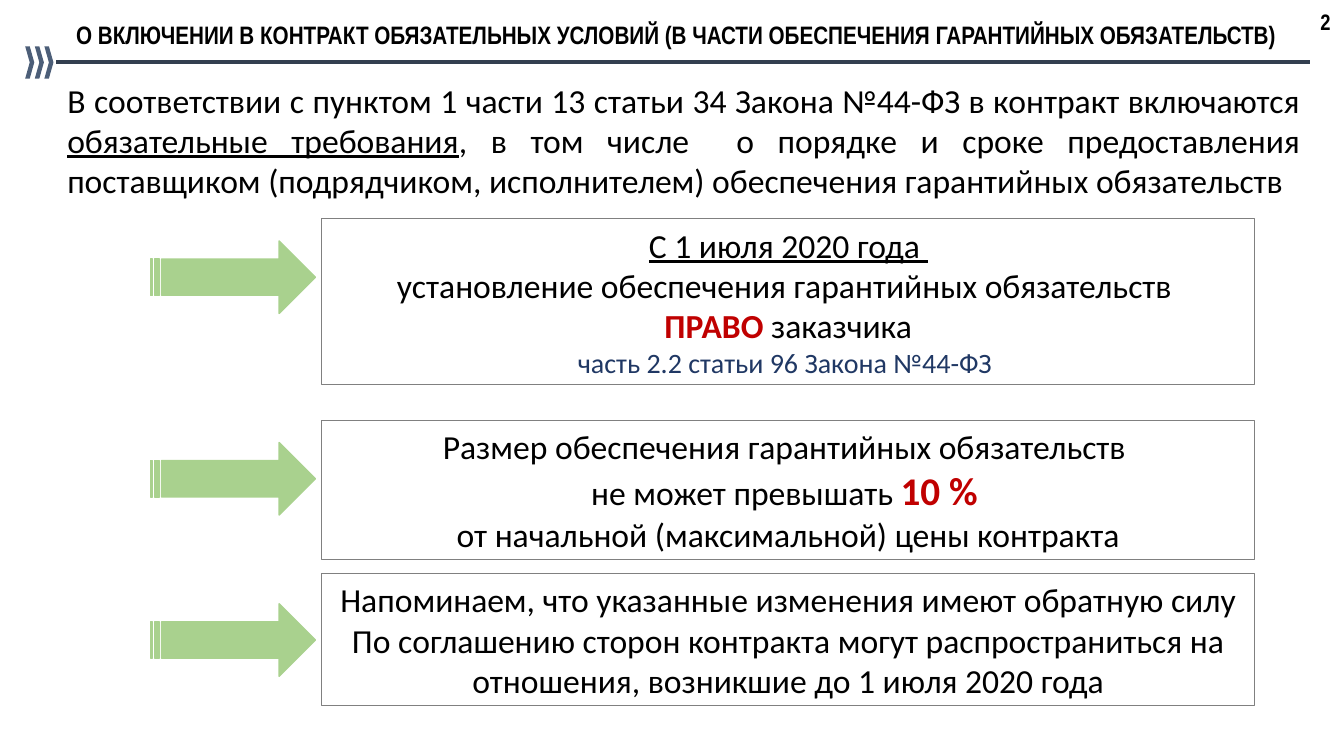
import pptx
import pptx.dml.color
import pptx.enum.shapes
import pptx.enum.text
import pptx.oxml.ns
import pptx.util
from lxml import etree

Pt = pptx.util.Pt
Shape = pptx.enum.shapes.MSO_SHAPE
Align = pptx.enum.text.PP_ALIGN
Anchor = pptx.enum.text.MSO_ANCHOR

# Content: a paragraph is a list of (text, style) runs
TITLE = [[("О ВКЛЮЧЕНИИ В КОНТРАКТ ОБЯЗАТЕЛЬНЫХ УСЛОВИЙ "
           "(В ЧАСТИ ОБЕСПЕЧЕНИЯ ГАРАНТИЙНЫХ ОБЯЗАТЕЛЬСТВ)", "title")]]
PAGE_NUMBER = [[("2", "page")]]
INTRO = [[
    ("В соответствии с пунктом 1 части 13 статьи 34 Закона №44-ФЗ в контракт включаются ", "body"),
    ("обязательные требования", "underlined"),
    (", в том числе  о порядке и сроке предоставления поставщиком "
     "(подрядчиком, исполнителем) обеспечения гарантийных обязательств", "body"),
]]
# Each card: top, height, arrow offset from card top, paragraphs
CARDS = [
    (156.2, 118.8, 15.9, [
        [("С 1 июля 2020 года ", "underlined")],
        [("установление обеспечения гарантийных обязательств ", "body")],
        [("ПРАВО", "accent"), (" заказчика", "body")],
        [("часть 2.2 статьи 96 Закона №44-ФЗ ", "reference")],
    ]),
    (300.2, 99.4, 15.9, [
        [("Размер обеспечения гарантийных обязательств ", "body")],
        [("не может превышать ", "body"), ("10 %", "figure"), (" ", "body")],
        [("от начальной (максимальной) цены контракта", "body")],
    ]),
    (409.7, 94.3, 21.6, [
        [("Напоминаем, что указанные изменения имеют обратную силу", "body")],
        [("По соглашению сторон контракта могут распространиться на "
          "отношения, возникшие до 1 июля 2020 года", "body")],
    ]),
]

# Theme: styles are font, size, colour, bold, underline
THEME = {
    "rule": "333F50", "chevron": "4C5E78", "border": "808080", "arrow": "A9D18E",
    "styles": {
        "title": ("Arial Narrow", 18, "000000", True, False),
        "page": ("Arial Narrow", 16, "000000", True, False),
        "body": ("Calibri", 24, "000000", False, False),
        "underlined": ("Calibri", 24, "000000", False, True),
        "accent": ("Calibri", 24, "C00000", True, False),
        "figure": ("Calibri", 28, "C00000", True, False),
        "reference": ("Calibri", 20, "203864", False, False),
    },
}

# Layout in points
CARD_LEFT, CARD_WIDTH = 229.7, 666.7
ARROW_LEFT, ARROW_WIDTH, ARROW_HEIGHT = 107.3, 118, 51.8
CHEVRON_LEFT, CHEVRON_STEP, CHEVRON_COUNT = 18, 6.85, 3


def color(name):
    return pptx.dml.color.RGBColor.from_string(THEME.get(name, name))


def set_font(font, style):
    font.name, size, ink, font.bold, font.underline = THEME["styles"][style]
    font.size = Pt(size)
    font.color.rgb = color(ink)


def write(shape, paragraphs, alignment):
    frame = shape.text_frame
    frame.word_wrap = True
    for index, runs in enumerate(paragraphs):
        paragraph = frame.add_paragraph() if index else frame.paragraphs[0]
        paragraph.alignment = alignment
        same_style = len({style for _, style in runs}) == 1
        if same_style:
            set_font(paragraph.font, runs[0][1])
        for text, style in runs:
            run = paragraph.add_run()
            run.text = text
            if not same_style:
                set_font(run.font, style)


def add_text(slide, box, paragraphs, alignment):
    write(slide.shapes.add_textbox(*map(Pt, box)), paragraphs, alignment)


def add_shape(slide, kind, box, fill=None, line=None, line_width=1):
    shape = slide.shapes.add_shape(kind, *map(Pt, box))
    shape.shadow.inherit = False
    if fill:
        shape.fill.solid()
        shape.fill.fore_color.rgb = color(fill)
    else:
        shape.fill.background()
    if line:
        shape.line.color.rgb = color(line)
        shape.line.width = Pt(line_width)
    else:
        shape.line.fill.background()
    return shape


def add_header(slide):
    add_text(slide, (32.4, 10.1, 901.4, 28.8), TITLE, Align.CENTER)
    add_text(slide, (936, 2, 21.6, 26.6), PAGE_NUMBER, Align.LEFT)
    rule = slide.shapes.add_connector(
        pptx.enum.shapes.MSO_CONNECTOR.STRAIGHT, Pt(40.3), Pt(44.6), Pt(936), Pt(44.6))
    rule.line.color.rgb = color("rule")
    rule.line.width = Pt(2.75)
    etree.SubElement(rule.element.spPr, pptx.oxml.ns.qn("a:effectLst"))
    for index in range(CHEVRON_COUNT):
        left = CHEVRON_LEFT + index * CHEVRON_STEP
        add_shape(slide, Shape.CHEVRON, (left, 33.1, 6.5, 23), fill="chevron")


def add_card(slide, top, height, arrow_offset, paragraphs):
    card = add_shape(slide, Shape.RECTANGLE, (CARD_LEFT, top, CARD_WIDTH, height),
                     line="border", line_width=0.75)
    card.text_frame.vertical_anchor = Anchor.MIDDLE
    write(card, paragraphs, Align.CENTER)
    add_shape(slide, Shape.STRIPED_RIGHT_ARROW,
              (ARROW_LEFT, top + arrow_offset, ARROW_WIDTH, ARROW_HEIGHT),
              fill="arrow", line="arrow")


def main():
    presentation = pptx.Presentation()
    presentation.slide_width, presentation.slide_height = Pt(960), Pt(540)
    slide = presentation.slides.add_slide(presentation.slide_layouts[6])
    add_header(slide)
    add_text(slide, (41, 53.3, 895, 94.3), INTRO, Align.JUSTIFY)
    for card in CARDS:
        add_card(slide, *card)
    presentation.save("out.pptx")


if __name__ == "__main__":
    main()
